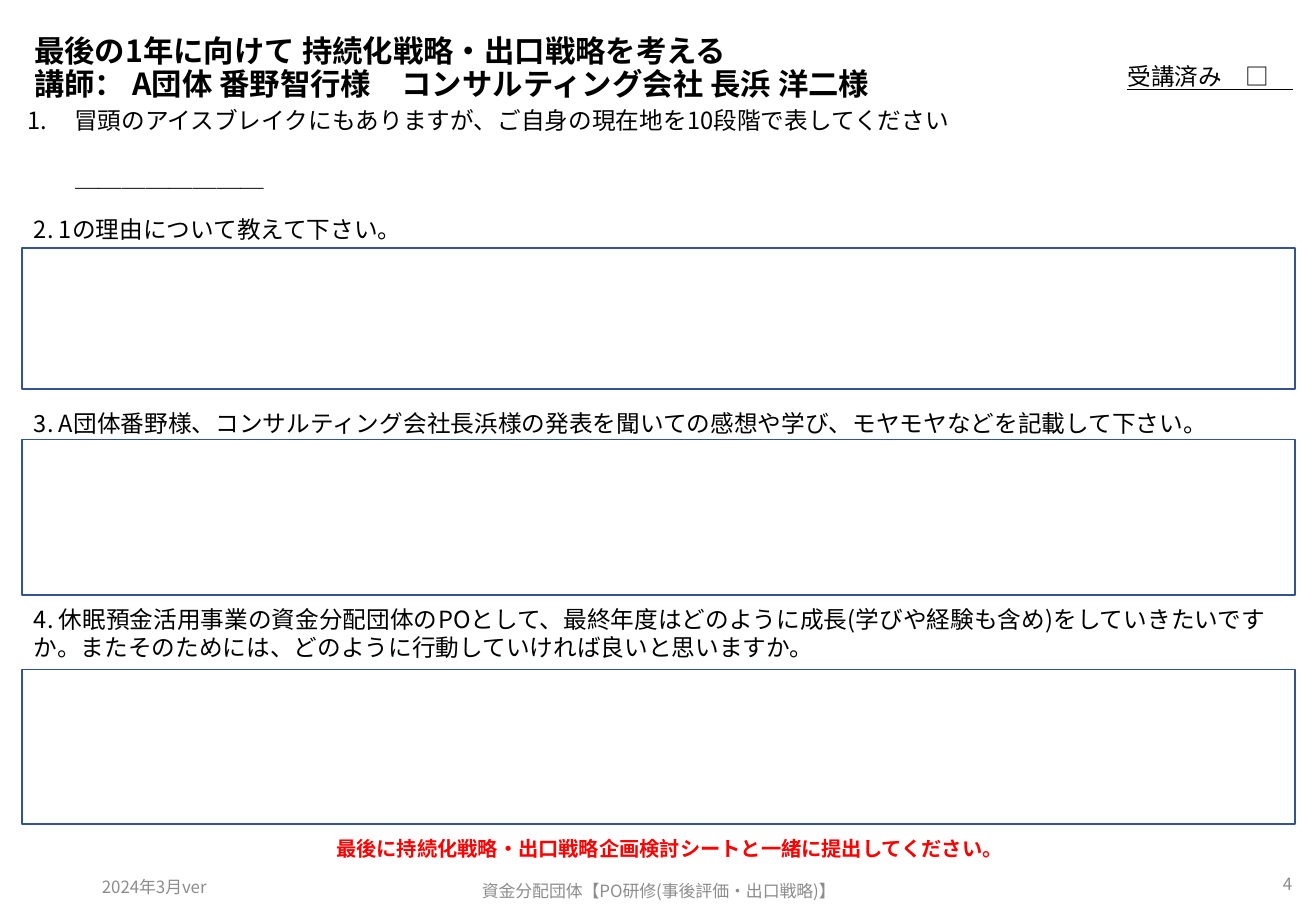
from dataclasses import dataclass
from lxml.etree import SubElement
from pptx import Presentation
from pptx.dml.color import RGBColor
from pptx.enum.shapes import MSO_SHAPE
from pptx.enum.text import MSO_ANCHOR, MSO_AUTO_SIZE, PP_ALIGN
from pptx.oxml.ns import qn
from pptx.util import Cm, Pt


@dataclass(frozen=True)
class Theme:
    face: str = "Noto Sans CJK JP"
    ink: RGBColor = RGBColor(0, 0, 0)
    grey: RGBColor = RGBColor(0x8C, 0x8C, 0x8C)
    red: RGBColor = RGBColor(0xFF, 0, 0)
    blue: RGBColor = RGBColor(0x32, 0x54, 0x91)
    white: RGBColor = RGBColor(0xFF, 0xFF, 0xFF)
    head: float = 18
    body: float = 14
    note: float = 12
    foot: float = 10


theme = Theme()


def style(para, size, color, bold=False):
    font = para.font
    font.size, font.bold, font.name = Pt(size), bold, theme.face
    font.color.rgb = color
    props = para._p.pPr.find(qn("a:defRPr"))
    SubElement(props, qn("a:ea"), typeface=theme.face)


def label(text, left, top, width, height, size=theme.body, color=theme.ink, bold=False):
    frame = slide.shapes.add_textbox(Cm(left), Cm(top), Cm(width), Cm(height)).text_frame
    frame.word_wrap = True
    para = frame.paragraphs[0]
    para.text = text
    style(para, size, color, bold)
    return frame


deck = Presentation()
deck.slide_width, deck.slide_height = Cm(27.51), Cm(19.05)
slide = deck.slides.add_slide(deck.slide_layouts[5])
edge, span = 0.46, 26.62

title = slide.shapes.title
title.left, title.top, title.width, title.height = Cm(edge), Cm(0.36), Cm(23.72), Cm(2.18)
frame = title.text_frame
frame.auto_size = MSO_AUTO_SIZE.NONE
frame.vertical_anchor = MSO_ANCHOR.MIDDLE
para = frame.paragraphs[0]
para.text = "最後の1年に向けて 持続化戦略・出口戦略を考える\v講師： A団体 番野智行様　コンサルティング会社 長浜 洋二様"
para.alignment = PP_ALIGN.LEFT
para.line_spacing = 0.9
style(para, theme.head, theme.ink, True)

frame = label("冒頭のアイスブレイクにもありますが、ご自身の現在地を10段階で表してください", 0.33, 2.08, 26.39, 2.06)
props = frame.paragraphs[0]._p.pPr
props.set("marL", str(Cm(0.97)))
props.set("indent", str(Cm(-0.97)))
mark = props.makeelement(qn("a:buAutoNum"), {"type": "arabicPeriod"})
props.insert(0, mark)
para = frame.add_paragraph()
para.text = "＿＿＿＿＿＿＿＿"
para.space_before = Pt(17)
style(para, theme.body, theme.ink)
para._p.pPr.set("marL", str(Cm(0.99)))

asks = [
    ("2. 1の理由について教えて下さい。", 4.37, 0.86, 5.18, 2.95),
    ("3. A団体番野様、コンサルティング会社長浜様の発表を聞いての感想や学び、モヤモヤなどを記載して下さい。", 8.43, 0.86, 9.19, 3.25),
    ("4. 休眠預金活用事業の資金分配団体のPOとして、最終年度はどのように成長(学びや経験も含め)をしていきたいですか。"
     "またそのためには、どのように行動していければ良いと思いますか。", 12.52, 1.45, 14.0, 3.23),
]
for text, top, height, low, tall in asks:
    box = slide.shapes.add_shape(MSO_SHAPE.RECTANGLE, Cm(edge), Cm(low), Cm(span), Cm(tall))
    box.shadow.inherit = False
    box.fill.solid()
    box.fill.fore_color.rgb = theme.white
    box.line.color.rgb = theme.blue
    box.line.width = Pt(1)
    label(text, edge, top, span, height)

done = label("受講済み　□　", 23.32, 1.17, 4.14, 0.86)
done.paragraphs[0].font.underline = True
label("最後に持続化戦略・出口戦略企画検討シートと一緒に提出してください。", 6.78, 17.37, 14.25, 0.76, theme.note, theme.red, True)

feet = [
    ("2024年3月ver", 1.88, 18.03, 6.2, PP_ALIGN.LEFT),
    ("資金分配団体【PO研修(事後評価・出口戦略)】", 9.12, 18.11, 9.3, PP_ALIGN.CENTER),
    ("4", 21.06, 17.98, 6.2, PP_ALIGN.RIGHT),
]
for text, left, top, width, align in feet:
    frame = label(text, left, top, width, 1.02, theme.foot, theme.grey)
    frame.vertical_anchor = MSO_ANCHOR.MIDDLE
    frame.paragraphs[0].alignment = align

deck.save("out.pptx")
